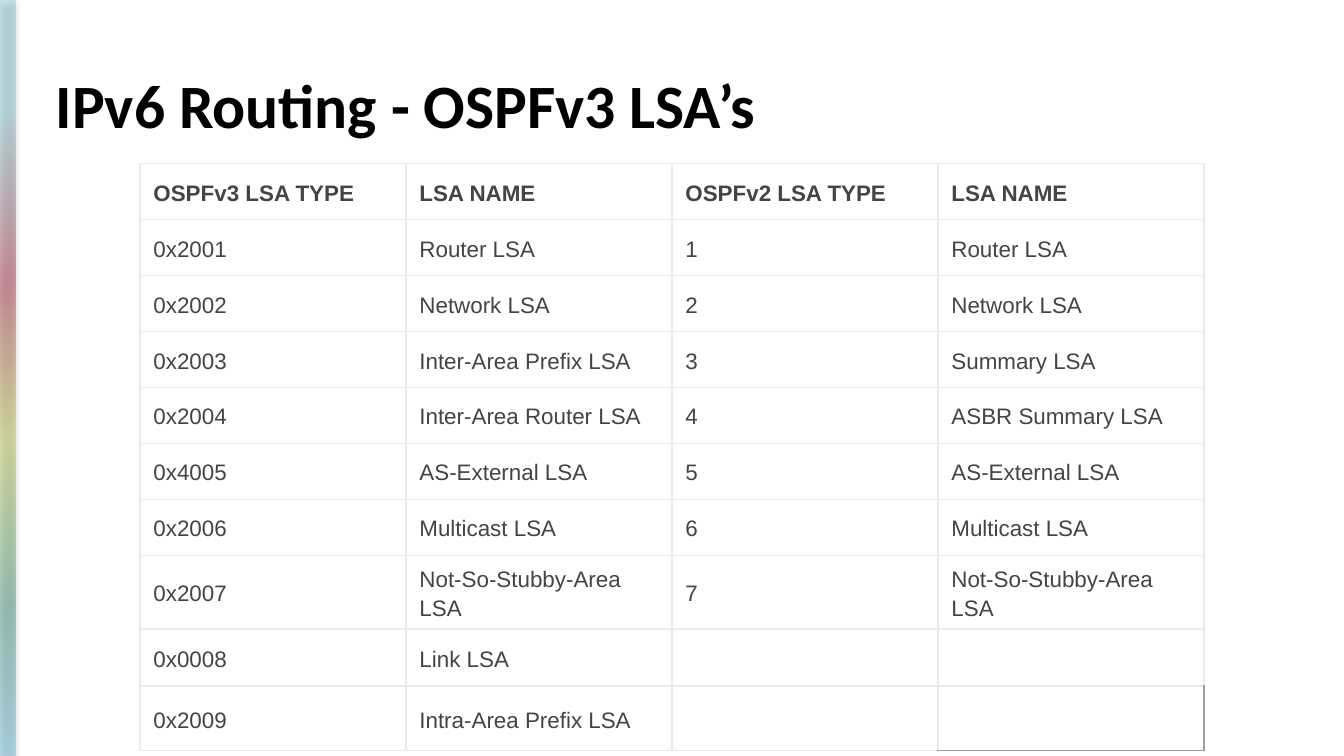
from lxml import etree
from pptx import Presentation
from pptx.dml.color import RGBColor
from pptx.enum import shapes, text
from pptx.oxml import ns
from pptx.util import Pt

COLORS = {
    "title": "000000",
    "body": "444444",
    "border": "EAEAEA",
    "corner": "9E9E9E",
    "shadow": "000000",
}
# Position in percent, colour; measured from the bottom of the bar
BAR_STOPS = [(0, "6CBFDC"), (20, "459582"), (42, "BAC851"),
             (62, "A42E40"), (85, "84C8D3"), (100, "84C8D3")]
LSA_ROWS = [
    ("OSPFv3 LSA TYPE", "LSA NAME", "OSPFv2 LSA TYPE", "LSA NAME"),
    ("0x2001", "Router LSA", "1", "Router LSA"),
    ("0x2002", "Network LSA", "2", "Network LSA"),
    ("0x2003", "Inter-Area Prefix LSA", "3", "Summary LSA"),
    ("0x2004", "Inter-Area Router LSA", "4", "ASBR Summary LSA"),
    ("0x4005", "AS-External LSA", "5", "AS-External LSA"),
    ("0x2006", "Multicast LSA", "6", "Multicast LSA"),
    ("0x2007", "Not-So-Stubby-Area LSA", "7", "Not-So-Stubby-Area LSA"),
    ("0x0008", "Link LSA", "", ""),
    ("0x2009", "Intra-Area Prefix LSA", "", ""),
]


def add_node(parent, tag, **attributes):
    node = etree.SubElement(parent, ns.qn(tag))
    for name, value in attributes.items():
        node.set(name, str(value))
    return node


def add_color(parent, color, alpha=None):
    node = add_node(parent, "a:srgbClr", val=color)
    if alpha is not None:
        add_node(node, "a:alpha", val=alpha * 1000)


def add_span(para, words, font, size, color, bold):
    span = para.add_run()
    span.text = words
    span.font.name = font
    span.font.size = Pt(size)
    span.font.bold = bold
    span.font.color.rgb = RGBColor.from_string(color)


def set_margins(target, side, upright):
    target.margin_left = target.margin_right = Pt(side)
    target.margin_top = target.margin_bottom = Pt(upright)


def add_side_bar(page, box):
    bar = page.shapes.add_shape(shapes.MSO_SHAPE.RECTANGLE, *map(Pt, box))
    bar.line.fill.background()
    properties = bar.element.spPr

    # Radial gradient from the bottom right corner
    gradient = etree.Element(ns.qn("a:gradFill"), rotWithShape="1")
    stops = add_node(gradient, "a:gsLst")
    for percent, color in BAR_STOPS:
        add_color(add_node(stops, "a:gs", pos=percent * 1000), color, 48)
    route = add_node(gradient, "a:path", path="circle")
    add_node(route, "a:fillToRect", l=100000, t=100000)
    properties.find(ns.qn("a:prstGeom")).addnext(gradient)

    # Soft shadow below
    effects = add_node(properties, "a:effectLst")
    shadow = add_node(effects, "a:outerShdw", blurRad=Pt(3.1), dist=Pt(1.8),
                      dir=90 * 60000, rotWithShape=0)
    add_color(shadow, COLORS["shadow"], 33)


def add_title(page, box, words):
    title = page.shapes.title
    title.left, title.top, title.width, title.height = map(Pt, box)
    frame = title.text_frame
    frame.word_wrap = True
    frame.auto_size = text.MSO_AUTO_SIZE.NONE
    frame.vertical_anchor = text.MSO_ANCHOR.MIDDLE
    set_margins(frame, 5.4, 2.7)
    para = frame.paragraphs[0]
    para.alignment = text.PP_ALIGN.LEFT
    para.line_spacing = 0.9
    add_span(para, words, "Calibri", 33, COLORS["title"], True)


def set_borders(cell, right_bottom):
    properties = cell._tc.get_or_add_tcPr()
    for side in "LRTB":
        line = add_node(properties, f"a:ln{side}", w=Pt(0.75))
        color = right_bottom if side in "RB" else COLORS["border"]
        add_color(add_node(line, "a:solidFill"), color)


def add_lsa_table(page, box, rows):
    left, top, width, height = box
    columns = len(rows[0])
    table = page.shapes.add_table(len(rows), columns, *map(Pt, box)).table
    table.first_row = table.horz_banding = False
    for column in table.columns:
        column.width = Pt(width / columns)
    for row in table.rows:
        row.height = Pt(height / len(rows))
    table.rows[len(rows) - 1].height = Pt(34.8)

    for r, row in enumerate(rows):
        for c, words in enumerate(row):
            cell = table.cell(r, c)
            is_corner = (r, c) == (len(rows) - 1, columns - 1)
            set_borders(cell, COLORS["corner" if is_corner else "border"])
            cell.fill.background()
            cell.vertical_anchor = text.MSO_ANCHOR.MIDDLE
            set_margins(cell, 7.2, 4.3)
            if words:
                para = cell.text_frame.paragraphs[0]
                para.line_spacing = 1.15
                add_span(para, words, "Arial", 12, COLORS["body"], r == 0)


def main():
    deck = Presentation()
    deck.slide_width, deck.slide_height = Pt(720), Pt(405)
    page = deck.slides.add_slide(deck.slide_layouts.get_by_name("Title Only"))
    add_side_bar(page, (0, 0, 8.2, 405))
    add_title(page, (24.5, 35.3, 671, 45.4), "IPv6 Routing - OSPFv3 LSA’s")
    add_lsa_table(page, (75, 87.5, 570, 300), LSA_ROWS)
    deck.save("out.pptx")


if __name__ == "__main__":
    main()
